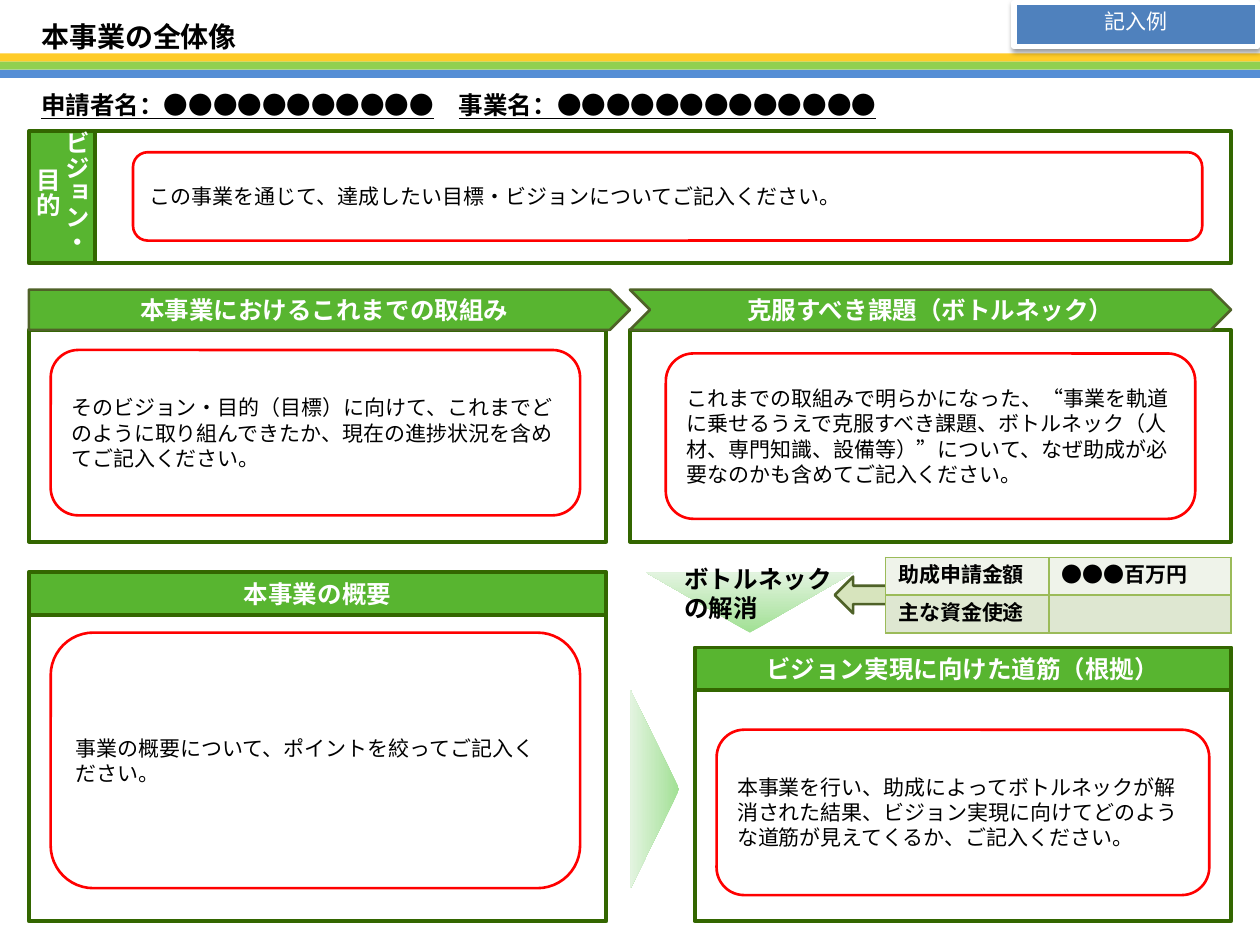
from lxml.etree import SubElement
from pptx import Presentation
from pptx.dml.color import RGBColor
from pptx.enum.shapes import MSO_SHAPE
from pptx.enum.text import MSO_ANCHOR, PP_ALIGN
from pptx.oxml import parse_xml
from pptx.oxml.ns import nsdecls, qn
from pptx.util import Pt

FONT = "Noto Sans CJK JP"
BLACK = RGBColor(0x00, 0x00, 0x00)
WHITE = RGBColor(0xFF, 0xFF, 0xFF)
YELLOW = RGBColor(0xFF, 0xCC, 0x29)
LIME = RGBColor(0x92, 0xD0, 0x50)
BLUE = RGBColor(0x55, 0x8E, 0xD5)
TAG_BLUE = RGBColor(0x4F, 0x81, 0xBD)
GREEN = RGBColor(0x58, 0xB5, 0x30)
DARK_GREEN = RGBColor(0x33, 0x66, 0x00)
OLIVE = RGBColor(0x4F, 0x62, 0x28)
PALE_OLIVE = RGBColor(0xD7, 0xE4, 0xBD)
RED = RGBColor(0xFF, 0x00, 0x00)
GRADIENT_START = RGBColor(0xA1, 0xE0, 0x94)
GRADIENT_END = RGBColor(0xE3, 0xF4, 0xE0)
ROW_COLORS = [RGBColor(0xEF, 0xF3, 0xEA), RGBColor(0xDE, 0xE7, 0xD1)]

LEFT, RIGHT = 16.5, 703.5
LEFT_WIDTH = 330
MIDDLE = 360
ROADMAP_LEFT = 397
ROADMAP_WIDTH = RIGHT - ROADMAP_LEFT


def style_text(text_frame, size, color, bold=False, align=PP_ALIGN.LEFT):
    text_frame.word_wrap = True
    for paragraph in text_frame.paragraphs:
        paragraph.alignment = align
        paragraph.line_spacing = Pt(round(size * 1.2, 1))
        for run in paragraph.runs:
            run.font.size = Pt(size)
            run.font.bold = bold
            run.font.name = FONT
            run.font.color.rgb = color
            SubElement(run.font._element, qn("a:ea")).set("typeface", FONT)


def add_box(kind, left, top, width, height, fill=None, line=None, line_width=2.25):
    shape = slide.shapes.add_shape(kind, Pt(left), Pt(top), Pt(width), Pt(height))
    shape.shadow.inherit = False
    if fill is None:
        shape.fill.background()
    else:
        shape.fill.solid()
        shape.fill.fore_color.rgb = fill
    if line is None:
        shape.line.fill.background()
    else:
        shape.line.color.rgb = line
        shape.line.width = Pt(line_width)
    shape.text_frame.vertical_anchor = MSO_ANCHOR.MIDDLE
    return shape


presentation = Presentation()
presentation.slide_width = Pt(720)
presentation.slide_height = Pt(540)
slide = presentation.slides.add_slide(presentation.slide_layouts[5])

for index, color in enumerate([YELLOW, LIME, BLUE]):
    add_box(MSO_SHAPE.RECTANGLE, 0, 30.5 + 4.7 * index, 720, 4.7, color)

title = slide.shapes.title
title.left, title.top, title.width, title.height = Pt(LEFT), Pt(4.5), Pt(686), Pt(33)
title.text_frame.text = "本事業の全体像"
title.text_frame.vertical_anchor = MSO_ANCHOR.MIDDLE
style_text(title.text_frame, 16, BLACK, bold=True)

names = slide.shapes.add_textbox(Pt(LEFT), Pt(47.5), Pt(703.5), Pt(24.5))
names.text_frame.vertical_anchor = MSO_ANCHOR.MIDDLE
for text, underline in [
    ("申請者名：●●●●●●●●●●●", True),
    ("\u3000".replace("\u3000", "　"), False),
    ("事業名：●●●●●●●●●●●●●", True),
]:
    run = names.text_frame.paragraphs[0].add_run()
    run.text = text
    run.font.underline = underline
style_text(names.text_frame, 14, BLACK, bold=True)

add_box(MSO_SHAPE.LEFT_ARROW, 477, 329.5, 57, 21, PALE_OLIVE, OLIVE, 1.5)

for left, top, width, height in [
    (54.5, 75, RIGHT - 54.5, 75.5),
    (LEFT, 188.5, LEFT_WIDTH, 121),
    (MIDDLE, 188.5, RIGHT - MIDDLE, 121),
    (LEFT, 351.5, LEFT_WIDTH, 175),
    (ROADMAP_LEFT, 394, ROADMAP_WIDTH, 132.5),
]:
    add_box(MSO_SHAPE.RECTANGLE, left, top, width, height, WHITE, DARK_GREEN)

for kind, left, top, width, height, line, line_width, text in [
    (MSO_SHAPE.RECTANGLE, LEFT, 75, 38, 75.5, DARK_GREEN, 2.25, "ビジョン・目的"),
    (MSO_SHAPE.PENTAGON, LEFT, 165.5, 343.5, 23, OLIVE, 1.5, "本事業におけるこれまでの取組み"),
    (MSO_SHAPE.CHEVRON, MIDDLE, 165.5, 343.5, 23, OLIVE, 1.5, "克服すべき課題（ボトルネック）"),
    (MSO_SHAPE.RECTANGLE, LEFT, 327, LEFT_WIDTH, 24.5, DARK_GREEN, 2.25, "本事業の概要"),
    (MSO_SHAPE.RECTANGLE, ROADMAP_LEFT, 370, ROADMAP_WIDTH, 24.5, DARK_GREEN, 2.25,
     "ビジョン実現に向けた道筋（根拠）"),
]:
    heading = add_box(kind, left, top, width, height, GREEN, line, line_width)
    text_frame = heading.text_frame
    text_frame.text = text
    if kind == MSO_SHAPE.RECTANGLE:
        text_frame.margin_left = text_frame.margin_right = 0
        text_frame.margin_top = text_frame.margin_bottom = 0
    if height > width:
        text_frame._txBody.bodyPr.set("vert", "eaVert")
    style_text(text_frame, 14, WHITE, bold=True, align=PP_ALIGN.CENTER)

for kind, left, top, width, height, rotation, angle in [
    (MSO_SHAPE.FLOWCHART_EXTRACT, 317.5, 437, 113.5, 28, 90, 270),
    (MSO_SHAPE.FLOWCHART_MERGE, 369, 327, 119, 34.5, 0, 90),
]:
    triangle = add_box(kind, left, top, width, height)
    triangle.rotation = rotation
    triangle.fill.gradient()
    triangle.fill.gradient_angle = angle
    for stop, color in zip(triangle.fill.gradient_stops, [GRADIENT_START, GRADIENT_END]):
        stop.color.rgb = color

solution = slide.shapes.add_textbox(Pt(384), Pt(318.5), Pt(104.5), Pt(41))
solution.text_frame.text = "ボトルネックの解消"
style_text(solution.text_frame, 14, BLACK, bold=True)

tag = add_box(MSO_SHAPE.RECTANGLE, 579.5, 1.5, 139, 25, TAG_BLUE, WHITE, 3)
tag.text_frame.text = "記入例"
tag.text_frame.vertical_anchor = MSO_ANCHOR.TOP
style_text(tag.text_frame, 12, WHITE, align=PP_ALIGN.CENTER)
tag._element.spPr.find(qn("a:effectLst")).append(parse_xml(
    f'<a:outerShdw {nsdecls("a")} blurRad="{Pt(3.1)}" dist="{Pt(1.6)}" dir="5400000" rotWithShape="0">'
    '<a:srgbClr val="000000"><a:alpha val="38000"/></a:srgbClr></a:outerShdw>'
))

for left, top, width, height, text in [
    (76, 87, 611, 50.5, "この事業を通じて、達成したい目標・ビジョンについてご記入ください。"),
    (29, 200, 302.5, 94.5,
     "そのビジョン・目的（目標）に向けて、これまでどのように取り組んできたか、現在の進捗状況を含めてご記入ください。"),
    (380.5, 202, 302.5, 94.5,
     "これまでの取組みで明らかになった、“事業を軌道に乗せるうえで克服すべき課題、ボトルネック（人材、専門知識、設備等）”"
     "について、なぜ助成が必要なのかも含めてご記入ください。"),
    (29, 361.5, 302.5, 146, "事業の概要について、ポイントを絞ってご記入ください。"),
    (409.5, 417, 281.5, 94.5,
     "本事業を行い、助成によってボトルネックが解消された結果、ビジョン実現に向けてどのような道筋が見えてくるか、ご記入ください。"),
]:
    guidance = add_box(MSO_SHAPE.ROUNDED_RECTANGLE, left, top, width, height, None, RED, 1.5)
    guidance.text_frame.text = text
    style_text(guidance.text_frame, 12, BLACK)

table = slide.shapes.add_table(2, 2, Pt(506), Pt(318.5), Pt(197.5), Pt(43.2)).table
table.columns[0].width = Pt(93.5)
table.columns[1].width = Pt(104)
funding = [["助成申請金額", "●●●百万円"], ["主な資金使途", ""]]
for row_index, (row, color) in enumerate(zip(funding, ROW_COLORS)):
    table.rows[row_index].height = Pt(21.6)
    for column_index, text in enumerate(row):
        cell = table.cell(row_index, column_index)
        cell.text_frame.text = text
        cell.vertical_anchor = MSO_ANCHOR.MIDDLE
        style_text(cell.text_frame, 12, BLACK, bold=True)
        if not text:
            cell.text_frame.paragraphs[0].font.size = Pt(12)
        for side in ["lnL", "lnR", "lnT", "lnB"]:
            cell._tc.get_or_add_tcPr().append(parse_xml(
                f'<a:{side} {nsdecls("a")} w="{Pt(1)}"><a:solidFill>'
                f'<a:srgbClr val="9BBB59"/></a:solidFill></a:{side}>'
            ))
        cell.fill.solid()
        cell.fill.fore_color.rgb = color

presentation.save("out.pptx")
